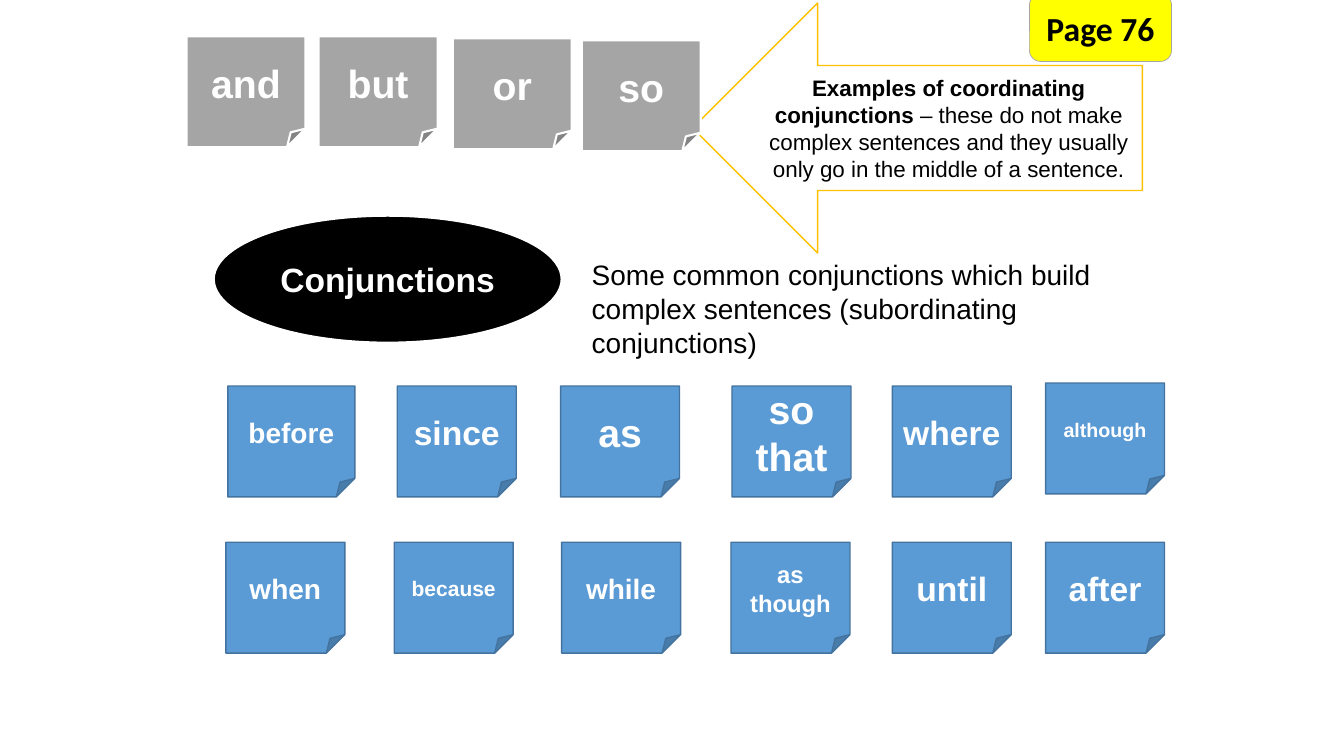
import pptx
import pptx.util
import pptx.dml.color
import pptx.enum.shapes
import pptx.enum.text

# Content: rows of notes as (word, type size, left, top, width)
WIDE, HIGH = 118, 110
JOIN = [
    ("and", 28, 185, 36, WIDE),
    ("but", 28, 316, 36, WIDE),
    ("or", 28, 449, 38, WIDE),
    ("so", 28, 577, 40, WIDE),
]
BUILD = [
    ("before", 20, 226, 383, 126),
    ("since", 24, 394, 383, WIDE),
    ("as", 28, 556, 383, WIDE),
    ("so that", 28, 726, 383, WIDE),
    ("where", 24, 885, 383, WIDE),
    ("although", 14, 1037, 380, WIDE),
    ("when", 20, 224, 538, WIDE),
    ("because", 15, 391, 538, WIDE),
    ("while", 20, 557, 538, WIDE),
    ("as though", 17, 725, 538, WIDE),
    ("until", 24, 885, 538, WIDE),
    ("after", 24, 1037, 538, WIDE),
]
TITLE = "Conjunctions"
LEAD = "Examples of coordinating conjunctions "
REST = "– these do not make complex sentences and they usually only go in the middle of a sentence."
INTRO = "Some common conjunctions which build complex sentences (subordinating conjunctions)"
PAGE = "Page 76"

# Theme: fill, line, line width and text colour of each look, then type
THEME = {
    "join": ("A5A5A5", "FFFFFF", 1.5, "FFFFFF"),
    "build": ("5B9BD5", "43739E", 1, "FFFFFF"),
    "title": ("000000", "FFFFFF", 1.5, "FFFFFF"),
    "arrow": ("FFFFFF", "FFC000", 1, "000000"),
    "page": ("FFFF00", "A5A5A5", 0.5, "000000"),
    "ink": "000000",
    "font": "Arial",
    "tag font": "Calibri",
    "big": 24,
    "intro": 20,
    "small": 16,
}

SCALE = 9144  # EMU in one px, 100 px to the inch
KIND = pptx.enum.shapes.MSO_SHAPE
ALIGN = pptx.enum.text.PP_ALIGN
MID = pptx.enum.text.MSO_ANCHOR.MIDDLE


def px(*nums):
    return [pptx.util.Emu(n * SCALE) for n in nums]


def rgb(code):
    return pptx.dml.color.RGBColor.from_string(code)


def write(para, text, size, ink, bold=True, font=THEME["font"]):
    run = para.add_run()
    run.text = text
    form = {"name": font, "size": pptx.util.Pt(size), "bold": bold}
    for key, value in form.items():
        setattr(run.font, key, value)
    run.font.color.rgb = rgb(ink)


def draw(slide, kind, box, look, runs):
    fill, line, width, ink = THEME[look]
    shape = slide.shapes.add_shape(kind, *px(*box))
    shape.shadow.inherit = False
    shape.fill.solid()
    shape.fill.fore_color.rgb = rgb(fill)
    shape.line.color.rgb = rgb(line)
    shape.line.width = pptx.util.Pt(width)
    frame = shape.text_frame
    for key, value in {"word_wrap": True, "vertical_anchor": MID}.items():
        setattr(frame, key, value)
    para = frame.paragraphs[0]
    para.alignment = ALIGN.CENTER
    for text, size, *more in runs:
        write(para, text, size, ink, *more)


def notes(slide, rows, look):
    for word, size, left, top, wide in rows:
        draw(slide, KIND.FOLDED_CORNER, (left, top, wide, HIGH), look, [(word, size)])


def main():
    deck = pptx.Presentation()
    deck.slide_width, deck.slide_height = px(1333, 750)
    slide = deck.slides.add_slide(deck.slide_layouts[6])

    # Subordinating notes and title
    notes(slide, BUILD, "build")
    draw(slide, KIND.OVAL, (212, 214, 345, 126), "title", [(TITLE, THEME["big"])])

    # Arrow lies under the last coordinating note
    small = THEME["small"]
    draw(slide, KIND.LEFT_ARROW, (687, 3, 446, 248), "arrow",
         [(LEAD, small), (REST, small, False)])
    notes(slide, JOIN, "join")

    # Introduction
    frame = slide.shapes.add_textbox(*px(577, 251, 568, 111)).text_frame
    frame.word_wrap = True
    write(frame.paragraphs[0], INTRO, THEME["intro"], THEME["ink"], False)

    # Page tag
    draw(slide, KIND.ROUNDED_RECTANGLE, (1021, -6, 141, 67), "page",
         [(PAGE, THEME["big"], True, THEME["tag font"])])

    deck.save("out.pptx")


if __name__ == "__main__":
    main()
